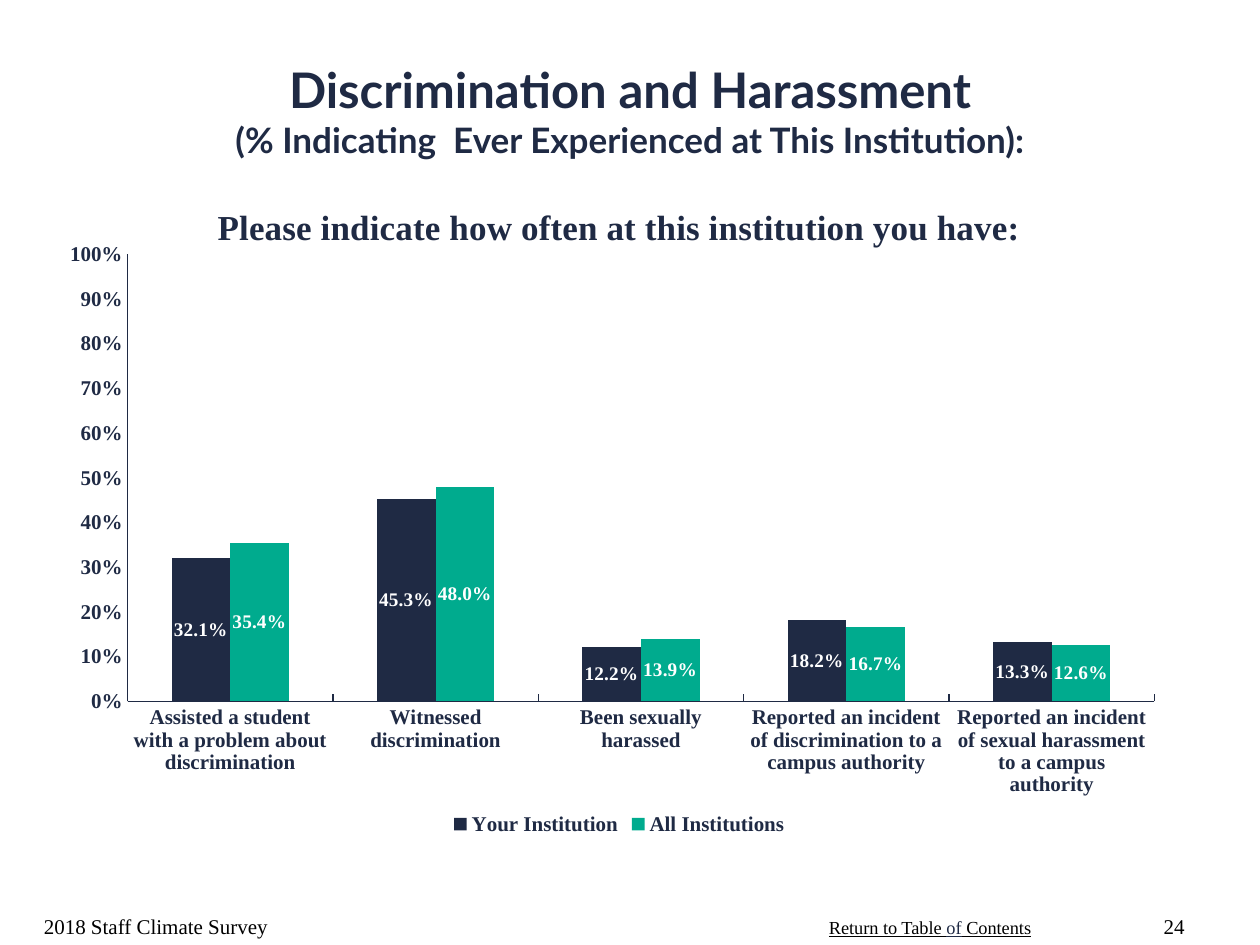
"""Builds the discrimination and harassment slide of the staff climate survey."""
import dataclasses

import lxml.etree
import pptx
import pptx.chart.data
import pptx.dml.color
import pptx.enum.chart
import pptx.enum.text
import pptx.oxml
import pptx.oxml.ns
import pptx.util

Inches = pptx.util.Inches
Align = pptx.enum.text.PP_ALIGN
Anchor = pptx.enum.text.MSO_ANCHOR


@dataclasses.dataclass(frozen=True)
class Theme:
    """Colours, fonts and type sizes of the slide."""
    navy: str = "1F2A44"
    green: str = "00AB8E"
    black: str = "000000"
    white: str = "FFFFFF"
    heading_font: str = "Lato"
    body_font: str = "Times New Roman"
    title_size: float = 28
    subtitle_size: float = 20
    body_size: float = 12
    label_size: float = 11
    link_size: float = 10.5


class SlideBuilder:
    """Holds the theme and the current slide."""

    def __init__(self, page, theme):
        """Keeps the page and its theme."""
        self.page = page
        self.theme = theme

    def style_font(self, font, color, **values):
        """Sets the colour and the given values of a font."""
        values = {"name": self.theme.body_font, "size": self.theme.body_size, **values}
        values["size"] = pptx.util.Pt(values["size"])
        for name, value in values.items():
            setattr(font, name, value)
        font.color.rgb = pptx.dml.color.RGBColor.from_string(color)

    def add_text(self, place, spans, align=Align.LEFT, anchor=Anchor.BOTTOM, wrap=True):
        """Adds a one-paragraph text box made of styled spans."""
        box = self.page.shapes.add_textbox(*map(Inches, place))
        frame = box.text_frame
        frame.word_wrap = wrap
        frame.vertical_anchor = anchor
        para = frame.paragraphs[0]
        para.alignment = align
        for text, color, values in spans:
            if text == "\n":
                para.add_line_break()
                continue
            span = para.add_run()
            span.text = text
            self.style_font(span.font, color, **values)

    def add_column_chart(self, place, plot_area, title, categories, series):
        """Adds a clustered column chart of percentages."""
        theme = self.theme
        data = pptx.chart.data.CategoryChartData(number_format="0.0%")
        data.categories = categories
        for name, values, _ in series:
            data.add_series(name, values)
        chart = self.page.shapes.add_chart(
            pptx.enum.chart.XL_CHART_TYPE.COLUMN_CLUSTERED, *map(Inches, place), data
        ).chart
        self.style_font(chart.font, theme.navy, bold=True)

        chart.has_title = True
        heading = chart.chart_title.text_frame
        heading.text = title
        self.style_font(heading.paragraphs[0].runs[0].font, theme.navy,
                        size=theme.subtitle_size, bold=True)

        chart.has_legend = True
        chart.legend.position = pptx.enum.chart.XL_LEGEND_POSITION.BOTTOM
        chart.legend.include_in_layout = False
        self.style_font(chart.legend.font, theme.navy, bold=True)

        marks = pptx.enum.chart.XL_TICK_MARK
        for axis, mark in ((chart.category_axis, marks.INSIDE), (chart.value_axis, marks.NONE)):
            axis.major_tick_mark = mark
            axis.minor_tick_mark = marks.NONE
            axis.has_major_gridlines = False
            self.style_font(axis.tick_labels.font, theme.navy, bold=True)
            axis.format.line.width = pptx.util.Pt(0.75)
            axis.format.line.color.rgb = pptx.dml.color.RGBColor.from_string(theme.navy)
        scale = {"minimum_scale": 0, "maximum_scale": 1, "major_unit": 0.1}
        for name, value in scale.items():
            setattr(chart.value_axis, name, value)
        chart.value_axis.tick_labels.number_format = "0%"
        chart.value_axis.tick_labels.number_format_is_linked = False

        plot = chart.plots[0]
        plot.vary_by_categories = False
        plot.gap_width = 150
        plot.overlap = 0
        label_format = {
            "show_value": True,
            "number_format": "0.0%",
            "number_format_is_linked": False,
            "position": pptx.enum.chart.XL_LABEL_POSITION.CENTER,
        }
        for columns, (_, _, color) in zip(plot.series, series):
            columns.format.fill.solid()
            columns.format.fill.fore_color.rgb = pptx.dml.color.RGBColor.from_string(color)
            labels = columns.data_labels
            for name, value in label_format.items():
                setattr(labels, name, value)
            self.style_font(labels.font, theme.white, size=theme.label_size, bold=True)
        self.place_plot(chart, plot_area)

    def place_plot(self, chart, plot_area):
        """Fixes the inner plot area as fractions of the chart."""
        qn = pptx.oxml.ns.qn
        area = chart.element.find(".//" + qn("c:plotArea"))
        for old in area.findall(qn("c:layout")):
            area.remove(old)
        layout = pptx.oxml.parse_xml(f"<c:layout {pptx.oxml.ns.nsdecls('c')}/>")
        area.insert(0, layout)
        manual = lxml.etree.SubElement(layout, qn("c:manualLayout"))
        settings = {"layoutTarget": "inner", "xMode": "edge", "yMode": "edge",
                    **dict(zip("xywh", plot_area))}
        for name, value in settings.items():
            lxml.etree.SubElement(manual, qn(f"c:{name}")).set("val", str(value))


def main():
    """Builds and saves the deck."""
    deck = pptx.Presentation()
    deck.slide_width, deck.slide_height = Inches(10), Inches(7.5)
    theme = Theme()
    builder = SlideBuilder(deck.slides.add_slide(deck.slide_layouts[6]), theme)

    link = {"size": theme.link_size, "underline": True}
    builder.add_text((6.48, 7.22, 1.82, 0.28), [
        ("Return to Table ", theme.black, link),
        ("of", theme.navy, link),
        (" Contents", theme.black, link),
    ], anchor=Anchor.TOP, wrap=False)

    heading = {"name": theme.heading_font, "bold": True}
    builder.add_text((0, 0.25, 10, 1.25), [
        ("Discrimination and Harassment", theme.navy, {**heading, "size": theme.title_size}),
        ("\n", theme.navy, {}),
        ("(% Indicating  Ever Experienced at This Institution):", theme.navy,
         {**heading, "size": theme.subtitle_size}),
    ], align=Align.CENTER, anchor=Anchor.MIDDLE)

    builder.add_column_chart(
        (0.5, 1.42, 8.83, 5.25),
        (0.058, 0.114, 0.923, 0.676),
        "Please indicate how often at this institution you have:",
        [
            "Assisted a student with a problem about discrimination",
            "Witnessed discrimination",
            "Been sexually harassed",
            "Reported an incident of discrimination to a campus authority",
            "Reported an incident of sexual harassment to a campus authority",
        ],
        [
            ("Your Institution", (0.321, 0.453, 0.122, 0.182, 0.133), theme.navy),
            ("All Institutions", (0.354, 0.48, 0.139, 0.167, 0.126), theme.green),
        ],
    )

    builder.add_text((0.25, 7, 3.17, 0.5), [("2018 Staff Climate Survey", theme.black, {})])
    builder.add_text((9, 7, 0.5, 0.5), [("24", theme.black, {})], align=Align.RIGHT)
    deck.save("out.pptx")


if __name__ == "__main__":
    main()
